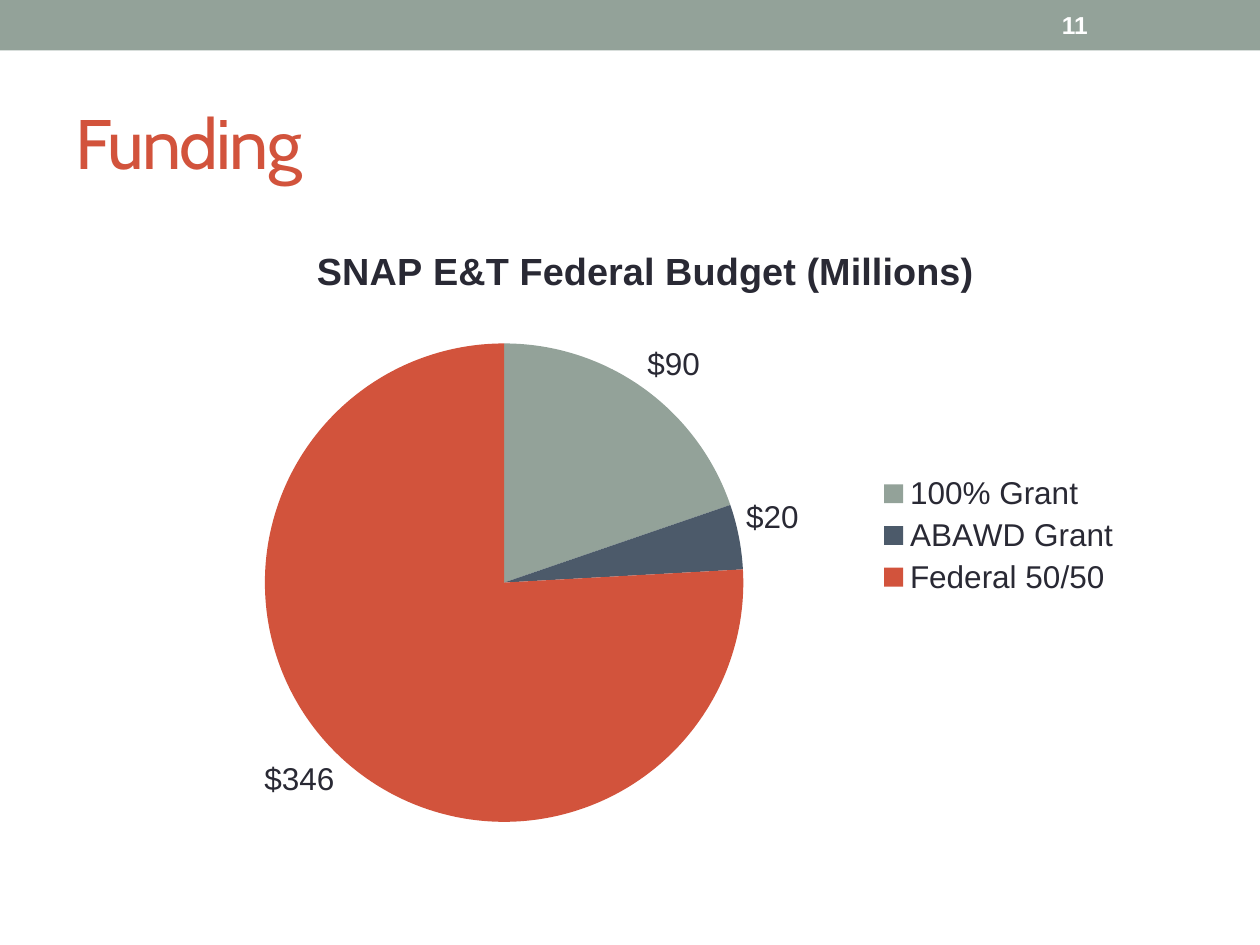
from lxml import etree
from pptx import Presentation
from pptx.chart.data import CategoryChartData
from pptx.dml.color import RGBColor
from pptx.enum.chart import XL_CHART_TYPE as ChartType
from pptx.enum.chart import XL_LABEL_POSITION as LabelPosition
from pptx.enum.chart import XL_LEGEND_POSITION as LegendPosition
from pptx.enum.shapes import MSO_SHAPE as Shape
from pptx.enum.text import MSO_ANCHOR as Anchor
from pptx.oxml.ns import qn
from pptx.util import Inches, Pt

COLORS = {
    "sage": "93A299",
    "slate": "4C5A6A",
    "red": "D2533C",
    "ink": "292934",
    "white": "FFFFFF",
}


def style_font(font, name, size, color, bold=False):
    font.name = name
    font.size = Pt(size)
    font.bold = bold
    font.color.rgb = RGBColor.from_string(COLORS[color])


def add_text(page, text, left, top, width, height):
    box = page.shapes.add_textbox(Inches(left), Inches(top), Inches(width), Inches(height))
    frame = box.text_frame
    frame.word_wrap = True
    frame.vertical_anchor = Anchor.MIDDLE
    frame.text = text
    return frame.paragraphs[0].runs[0]


deck = Presentation()
deck.slide_width = Inches(10)
deck.slide_height = Inches(7.5)
page = deck.slides.add_slide(deck.slide_layouts[6])

# Top band
band = page.shapes.add_shape(Shape.RECTANGLE, 0, 0, Inches(10), Inches(0.4))
band.shadow.inherit = False
band.fill.solid()
band.fill.fore_color.rgb = RGBColor.from_string(COLORS["sage"])
band.line.fill.background()

# Title and page number
title = add_text(page, "Funding", 0.5, 0.58, 9, 1.08)
style_font(title.font, "Cabin", 40, "red")
title.font._element.set("spc", "-100")
number = add_text(page, "11", 8.33, 0.02, 1.17, 0.36)
style_font(number.font, "Arial", 14, "white", bold=True)

# Budget pie
budget = CategoryChartData(number_format='"$"#,##0')
budget.categories = ["100% Grant", "ABAWD Grant", "Federal 50/50"]
budget.add_series("Series 1", (90, 20, 346))
chart = page.shapes.add_chart(
    ChartType.PIE, Inches(1.25), Inches(1.75), Inches(7.75), Inches(5), budget
).chart
style_font(chart.font, "Arial", 18, "ink")

# Chart title and legend
chart.has_title = True
heading = chart.chart_title.text_frame
heading.text = "SNAP E&T Federal Budget (Millions)"
style_font(heading.paragraphs[0].runs[0].font, "Arial", 21.6, "ink", bold=True)
chart.has_legend = True
chart.legend.position = LegendPosition.RIGHT
chart.legend.include_in_layout = False

# Slice colours
plot = chart.plots[0]
plot.vary_by_categories = True
for index, color in enumerate(("sage", "slate", "red")):
    slice_fill = plot.series[0].points[index].format.fill
    slice_fill.solid()
    slice_fill.fore_color.rgb = RGBColor.from_string(COLORS[color])

# Value labels
plot.has_data_labels = True
labels = plot.data_labels
labels.show_value = True
labels.show_percentage = False
labels.position = LabelPosition.OUTSIDE_END
labels.number_format = '"$"#,##0'
labels.number_format_is_linked = False
style_font(labels.font, "Arial", 18, "ink")

# Pie position, as fractions of the chart area
plot_area = chart._chartSpace.chart.plotArea
for old_layout in plot_area.findall(qn("c:layout")):
    plot_area.remove(old_layout)
layout = etree.Element(qn("c:layout"))
plot_area.insert(0, layout)
manual = etree.SubElement(layout, qn("c:manualLayout"))
for tag, value in (
    ("layoutTarget", "inner"), ("xMode", "edge"), ("yMode", "edge"),
    ("x", "0.11"), ("y", "0.19"), ("w", "0.49"), ("h", "0.77"),
):
    etree.SubElement(manual, qn(f"c:{tag}")).set("val", value)

deck.save("out.pptx")
